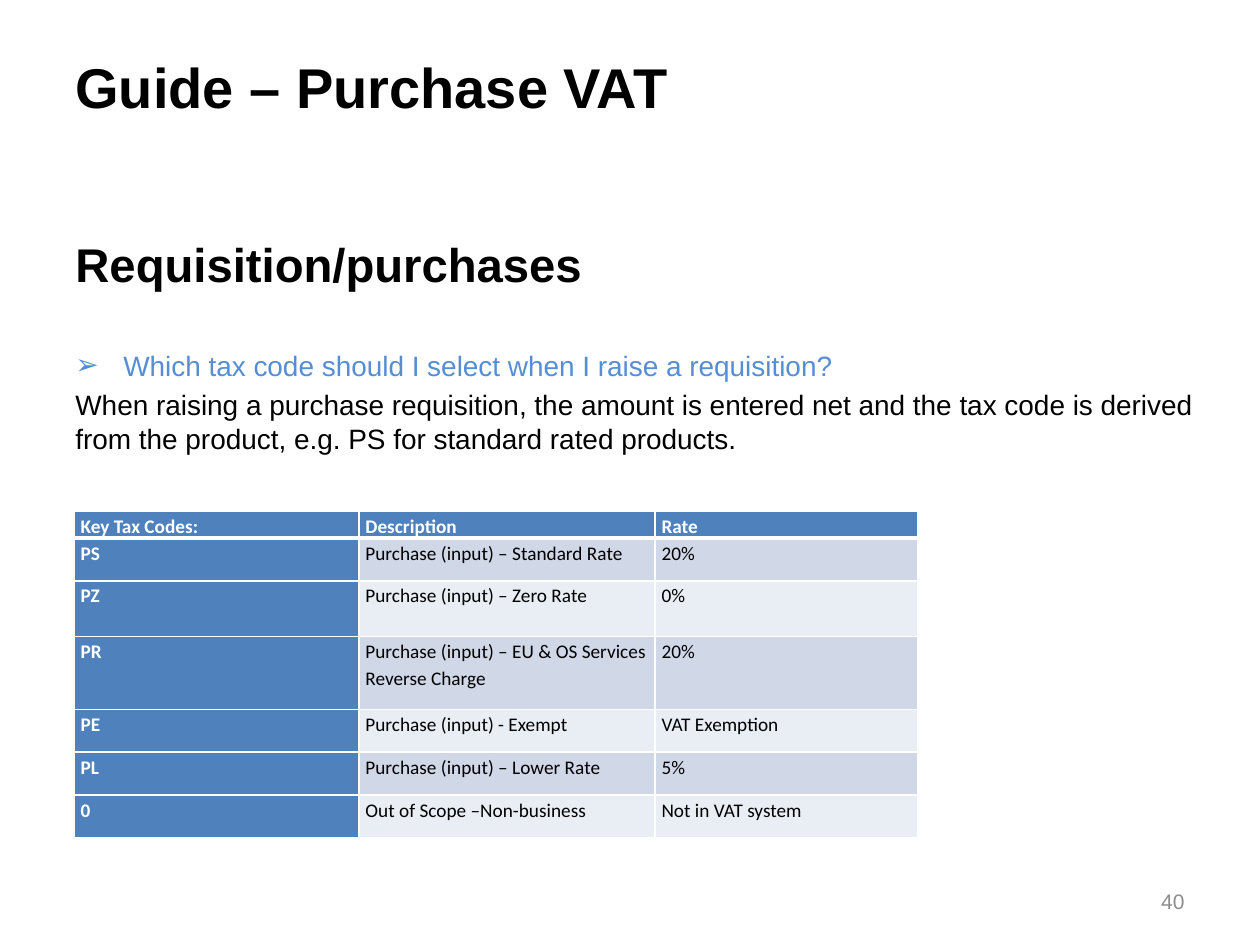
from lxml import etree
from pptx import Presentation
from pptx.dml.color import RGBColor
from pptx.enum.text import MSO_ANCHOR, PP_ALIGN
from pptx.oxml.ns import qn
from pptx.util import Inches, Pt

LEFT, RIGHT, JUSTIFY = PP_ALIGN.LEFT, PP_ALIGN.RIGHT, PP_ALIGN.JUSTIFY
TOP, MIDDLE, BOTTOM = MSO_ANCHOR.TOP, MSO_ANCHOR.MIDDLE, MSO_ANCHOR.BOTTOM

BLACK, WHITE, GREY = "000000", "FFFFFF", "8C8C8C"
QUESTION_BLUE, HEADER_BLUE = "558ED5", "4F81BD"
BANDS = ("D0D8E8", "E9EDF4")

TITLE = "Guide – Purchase VAT"
HEADING = "Requisition/purchases"
QUESTION = "Which tax code should I select when I raise a requisition?"
ANSWER = ("When raising a purchase requisition, the amount is entered net and the tax code "
          "is derived from the product, e.g. PS for standard rated products.")
PAGE_NUMBER = "40"

TAX_CODES = [
    ("Key Tax Codes:", "Description", "Rate"),
    ("PS", "Purchase (input) – Standard Rate", "20%"),
    ("PZ", "Purchase (input) – Zero Rate", "0%"),
    ("PR", "Purchase (input) – EU & OS Services Reverse Charge", "20%"),
    ("PE", "Purchase (input) - Exempt", "VAT Exemption"),
    ("PL", "Purchase (input) – Lower Rate", "5%"),
    ("0", "Out of Scope –Non-business", "Not in VAT system"),
]
COLUMN_WIDTHS = (2.26, 2.35, 2.08)
ROW_HEIGHTS = (0.21, 0.34, 0.44, 0.58, 0.34, 0.34, 0.34)


def color(value):
    return RGBColor.from_string(value)


def add_bullet(para, symbol, indent):
    properties = para._p.get_or_add_pPr()
    properties.set("marL", str(Inches(indent)))
    properties.set("indent", str(-Inches(indent)))
    etree.SubElement(properties, qn("a:buFont"), typeface="Arial")
    etree.SubElement(properties, qn("a:buChar"), char=symbol)


def write(frame, text, size, ink=BLACK, font="Arial", bold=False, align=LEFT,
          before=None, after=None, spacing=None, bullet=None):
    """Fill the frame's empty first paragraph, or append a new one."""
    first = frame.paragraphs[0]
    para = frame.add_paragraph() if first.runs else first
    if bullet:
        add_bullet(para, bullet, 0.38)
    para.alignment = align
    if before is not None:
        para.space_before = Pt(before)
    if after is not None:
        para.space_after = Pt(after)
    if spacing is not None:
        para.line_spacing = spacing
    span = para.add_run()
    span.text = text
    span.font.name = font
    span.font.size = Pt(size)
    span.font.bold = bold
    span.font.color.rgb = color(ink)


def add_frame(page, left, top, width, height, anchor=TOP):
    box = page.shapes.add_textbox(Inches(left), Inches(top), Inches(width), Inches(height))
    box.text_frame.word_wrap = True
    box.text_frame.vertical_anchor = anchor
    return box.text_frame


def set_borders(cell, bottom):
    properties = cell._tc.get_or_add_tcPr()
    widths = {"lnL": 1, "lnR": 1, "lnT": 1, "lnB": bottom}
    for position, (side, width) in enumerate(widths.items()):
        line = etree.Element(qn(f"a:{side}"), w=str(Pt(width)))
        fill = etree.SubElement(line, qn("a:solidFill"))
        etree.SubElement(fill, qn("a:srgbClr"), val=WHITE)
        properties.insert(position, line)


def add_tax_table(page, left, top):
    table = page.shapes.add_table(
        len(TAX_CODES), len(COLUMN_WIDTHS), Inches(left), Inches(top),
        Inches(sum(COLUMN_WIDTHS)), Inches(sum(ROW_HEIGHTS))).table
    table.first_col = True
    for column, width in zip(table.columns, COLUMN_WIDTHS):
        column.width = Inches(width)
    for row, height in zip(table.rows, ROW_HEIGHTS):
        row.height = Inches(height)
    for r, values in enumerate(TAX_CODES):
        for c, text in enumerate(values):
            cell = table.cell(r, c)
            is_header = r == 0 or c == 0
            cell.margin_left = cell.margin_right = Inches(0.05)
            cell.margin_top = cell.margin_bottom = 0
            cell.fill.solid()
            cell.fill.fore_color.rgb = color(HEADER_BLUE if is_header else BANDS[(r - 1) % 2])
            # The header's lower rule doubles as the first row's upper one.
            set_borders(cell, bottom=3 if r == 0 else 1)
            write(cell.text_frame, text, 11, font="Calibri", bold=is_header,
                  ink=WHITE if is_header else BLACK, spacing=1.15, after=10)


def main():
    deck = Presentation()
    deck.slide_width, deck.slide_height = Inches(10), Inches(7.5)
    page = deck.slides.add_slide(deck.slide_layouts[6])

    body = add_frame(page, 0.5, 1.82, 9.15, 5)
    write(body, HEADING, 27, bold=True)
    write(body, QUESTION, 16, ink=QUESTION_BLUE, before=32, bullet="➢")
    write(body, ANSWER, 16, before=3.5)

    number = add_frame(page, 7.17, 6.95, 2.33, 0.4, anchor=MIDDLE)
    write(number, PAGE_NUMBER, 12, ink=GREY, align=RIGHT)

    title = add_frame(page, 0.5, 0.13, 8.98, 0.87, anchor=BOTTOM)
    write(title, TITLE, 32, bold=True, align=JUSTIFY)

    add_tax_table(page, 0.59, 4.06)
    deck.save("out.pptx")


if __name__ == "__main__":
    main()
